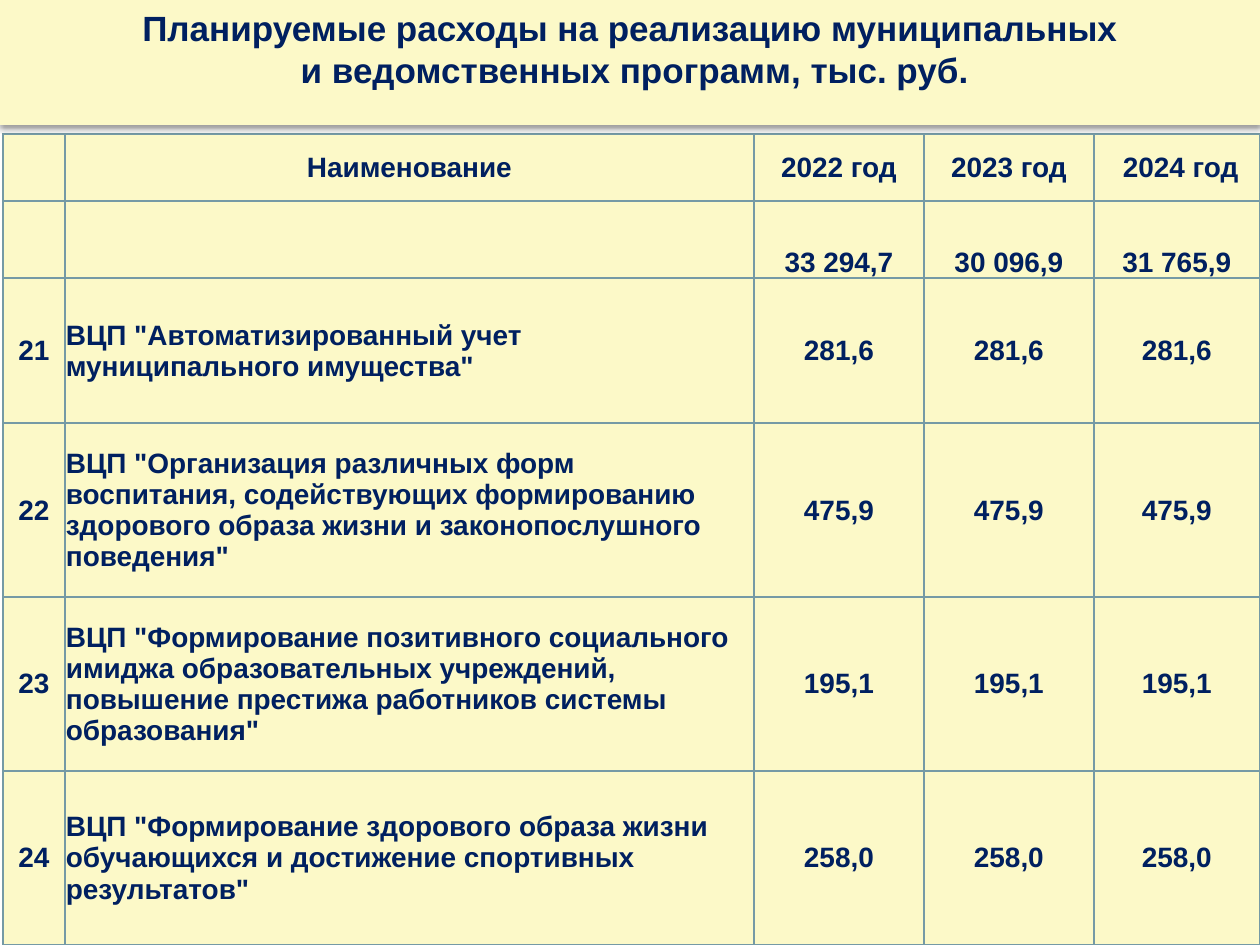
from lxml.etree import SubElement
from pptx import Presentation
from pptx.dml.color import RGBColor
from pptx.enum.text import MSO_ANCHOR as Anchor, PP_ALIGN as Align
from pptx.oxml.ns import qn
from pptx.util import Pt

PX = 914400 // 126
THEME = {
    "cream": RGBColor.from_string("FCF9C8"),
    "navy": RGBColor.from_string("002060"),
    "border": "759AA5",
    "shadow": "000000",
    "font": "Arial",
    "title_size": Pt(20),
    "table_size": Pt(16),
}


def write_line(para, text, size, align):
    para.alignment = align
    span = para.add_run()
    span.text = text
    span.font.color.rgb = THEME["navy"]
    for name, value in {"name": THEME["font"], "size": size, "bold": True}.items():
        setattr(span.font, name, value)


def add_color(parent, color):
    return SubElement(parent, qn("a:srgbClr"), val=color)


deck = Presentation()
deck.slide_width, deck.slide_height = 1260 * PX, 945 * PX
page = deck.slides.add_slide(deck.slide_layouts[5])

# Program costs table
rows = [
    ["", "Наименование", "2022 год", "2023 год", " 2024 год"],
    ["", "", "33 294,7", "30 096,9", "31 765,9"],
    ["21", 'ВЦП "Автоматизированный учет муниципального имущества"']
    + ["281,6"] * 3,
    ["22", 'ВЦП "Организация различных форм воспитания, содействующих '
     'формированию здорового образа жизни и законопослушного поведения"']
    + ["475,9"] * 3,
    ["23", 'ВЦП "Формирование позитивного социального имиджа образовательных '
     'учреждений, повышение престижа работников системы образования"']
    + ["195,1"] * 3,
    ["24", 'ВЦП "Формирование здорового образа жизни обучающихся и достижение '
     'спортивных результатов"']
    + ["258,0"] * 3,
]
column_widths = [62, 689, 170, 170, 166]
row_heights = [67, 77, 145, 174, 174, 174]
TOTALS_ROW, NAME_COLUMN = 1, 1

table = page.shapes.add_table(
    len(rows), len(column_widths), 3 * PX, 134 * PX,
    sum(column_widths) * PX, sum(row_heights) * PX,
).table
table.first_row = table.horz_banding = False
for column, width in zip(table.columns, column_widths):
    column.width = width * PX
for row, height in zip(table.rows, row_heights):
    row.height = height * PX

cell_format = {"margin_left": PX, "margin_right": PX, "margin_top": PX, "margin_bottom": 0}
for row_index, texts in enumerate(rows):
    for column_index, text in enumerate(texts):
        cell = table.cell(row_index, column_index)
        for name, value in cell_format.items():
            setattr(cell, name, value)
        cell.vertical_anchor = Anchor.BOTTOM if row_index == TOTALS_ROW else Anchor.MIDDLE
        properties = cell._tc.get_or_add_tcPr()
        for side in ("lnL", "lnR", "lnT", "lnB"):
            line = SubElement(properties, qn(f"a:{side}"), w=str(Pt(1)))
            add_color(SubElement(line, qn("a:solidFill")), THEME["border"])
        cell.fill.solid()
        cell.fill.fore_color.rgb = THEME["cream"]
        if text:
            is_name = column_index == NAME_COLUMN and row_index > TOTALS_ROW
            write_line(cell.text_frame.paragraphs[0], text, THEME["table_size"],
                       Align.LEFT if is_name else Align.CENTER)

# Title band, in front of the table so that its shadow falls on it
title = page.shapes.title
page.shapes.element.append(title.element)
for name, value in {"left": 0, "top": 0, "width": 1260 * PX, "height": 125 * PX}.items():
    setattr(title, name, value)
title.fill.solid()
title.fill.fore_color.rgb = THEME["cream"]
effects = SubElement(title.element.spPr, qn("a:effectLst"))
shadow = SubElement(effects, qn("a:outerShdw"), blurRad=str(Pt(3.1)), dist=str(Pt(2)),
                    dir=str(90 * 60000), rotWithShape="0")
SubElement(add_color(shadow, THEME["shadow"]), qn("a:alpha"), val="38000")

frame = title.text_frame
frame.word_wrap = True
frame.vertical_anchor = Anchor.TOP
title_lines = [
    "Планируемые расходы на реализацию муниципальных",
    " и ведомственных программ, тыс. руб.",
]
for index, text in enumerate(title_lines):
    para = frame.add_paragraph() if index else frame.paragraphs[0]
    para.line_spacing = Pt(24)
    write_line(para, text, THEME["title_size"], Align.CENTER)

deck.save("out.pptx")
